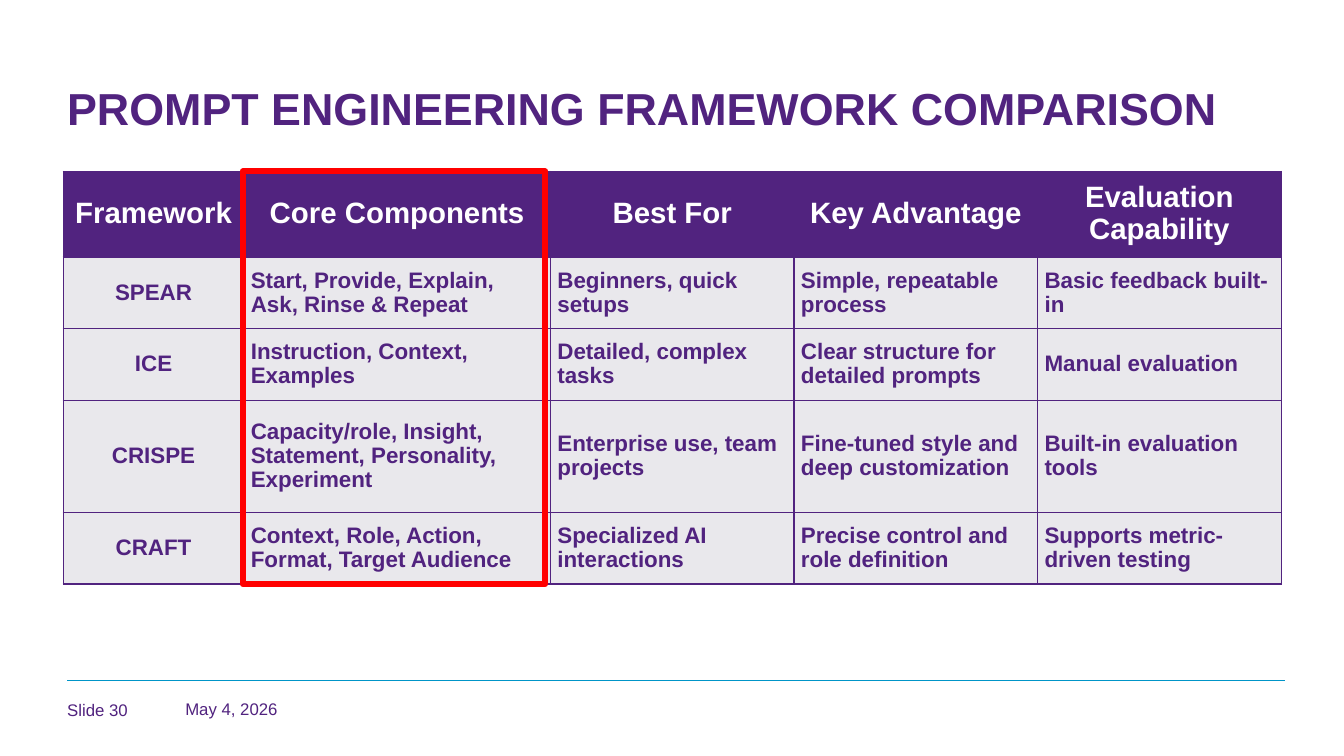
from pptx import Presentation
from pptx.util import Pt
from pptx.dml.color import RGBColor
from pptx.enum import shapes, text
from pptx.oxml import parse_xml
from pptx.oxml.ns import nsdecls
from lxml import etree

PURPLE = RGBColor(0x51, 0x23, 0x7F)
GRAY = RGBColor(0xE9, 0xE8, 0xEC)
WHITE = RGBColor(0xFF, 0xFF, 0xFF)
RED = RGBColor(0xFF, 0, 0)
BLUE = RGBColor(0, 0x95, 0xC8)
FONT = "Arial"

TITLE = "PROMPT ENGINEERING FRAMEWORK COMPARISON"
ROWS = [
    ("Framework", "Core Components", "Best For", "Key Advantage",
     "Evaluation Capability"),
    ("SPEAR", "Start, Provide, Explain, Ask, Rinse & Repeat",
     "Beginners, quick setups", "Simple, repeatable process",
     "Basic feedback built-in"),
    ("ICE", "Instruction, Context, Examples", "Detailed, complex tasks",
     "Clear structure for detailed prompts", "Manual evaluation"),
    ("CRISPE", "Capacity/role, Insight, Statement, Personality, Experiment",
     "Enterprise use, team projects",
     "Fine-tuned style and deep customization", "Built-in evaluation tools"),
    ("CRAFT", "Context, Role, Action, Format, Target Audience",
     "Specialized AI interactions", "Precise control and role definition",
     "Supports metric-driven testing"),
]
WIDTHS = [129, 219, 174, 174, 174]
HEIGHTS = [61.2, 51.2, 51.2, 80, 51.2]
LEFT, TOP, EDGE = 45.2, 122.4, 48
MIDDLE = text.MSO_ANCHOR.MIDDLE


def style(para, size, color, bold=False):
    font = para.font
    font.name, font.size, font.bold = FONT, Pt(size), bold
    font.color.rgb = color


def label(slide, words, box, size, bold=False, pad=0, anchor=MIDDLE):
    frame = slide.shapes.add_textbox(*map(Pt, box)).text_frame
    frame.word_wrap = True
    frame.vertical_anchor = anchor
    frame.margin_left = frame.margin_right = Pt(pad)
    frame.margin_top = frame.margin_bottom = Pt(pad / 2)
    para = frame.paragraphs[0]
    para.text = words
    style(para, size, PURPLE, bold)
    return para


def border(cell):
    props = cell._tc.get_or_add_tcPr()
    for spot, side in enumerate(("lnL", "lnR", "lnT", "lnB")):
        props.insert(spot, parse_xml(
            f'<a:{side} {nsdecls("a")} w="{Pt(1)}"><a:solidFill>'
            f'<a:srgbClr val="{PURPLE}"/></a:solidFill></a:{side}>'))


def grid(slide):
    table = slide.shapes.add_table(
        len(ROWS), len(WIDTHS), Pt(LEFT), Pt(TOP),
        Pt(sum(WIDTHS)), Pt(sum(HEIGHTS))).table
    for col, width in zip(table.columns, WIDTHS):
        col.width = Pt(width)
    for r, (words, height) in enumerate(zip(ROWS, HEIGHTS)):
        table.rows[r].height = Pt(height)
        for c, word in enumerate(words):
            head = r == 0
            cell = table.cell(r, c)
            cell.fill.solid()
            cell.fill.fore_color.rgb = PURPLE if head else GRAY
            border(cell)
            cell.vertical_anchor = MIDDLE
            cell.margin_left = cell.margin_right = Pt(5)
            cell.margin_top = cell.margin_bottom = Pt(5)
            para = cell.text_frame.paragraphs[0]
            para.text = word
            para.line_spacing = 0.96
            if head or c == 0:
                para.alignment = text.PP_ALIGN.CENTER
            style(para, 21 if head else 16, WHITE if head else PURPLE, True)


def main():
    deck = Presentation()
    deck.slide_width, deck.slide_height = Pt(960), Pt(540)
    slide = deck.slides.add_slide(deck.slide_layouts[6])

    rule = slide.shapes.add_connector(
        shapes.MSO_CONNECTOR.STRAIGHT, Pt(EDGE), Pt(486), Pt(918), Pt(486))
    rule.line.color.rgb = BLUE
    rule.line.width = Pt(0.5)
    etree.SubElement(rule._element.spPr, f"{{{rule._element.nsmap['a']}}}effectLst")

    title = label(slide, TITLE, (EDGE, 54, 870, 41), 32, True,
                  anchor=text.MSO_ANCHOR.TOP)
    title.line_spacing = Pt(42)
    grid(slide)
    label(slide, "May 4, 2026", (125.3, 498.2, 216, 16.6), 12, pad=7.2)
    label(slide, "Slide 30", (EDGE, 498.2, 62.6, 17.3), 12)

    frame = slide.shapes.add_shape(
        shapes.MSO_SHAPE.RECTANGLE, Pt(173.5), Pt(TOP),
        Pt(216), Pt(sum(HEIGHTS)))
    frame.shadow.inherit = False
    frame.fill.background()
    frame.line.color.rgb = RED
    frame.line.width = Pt(4.5)

    deck.save("out.pptx")


if __name__ == "__main__":
    main()
